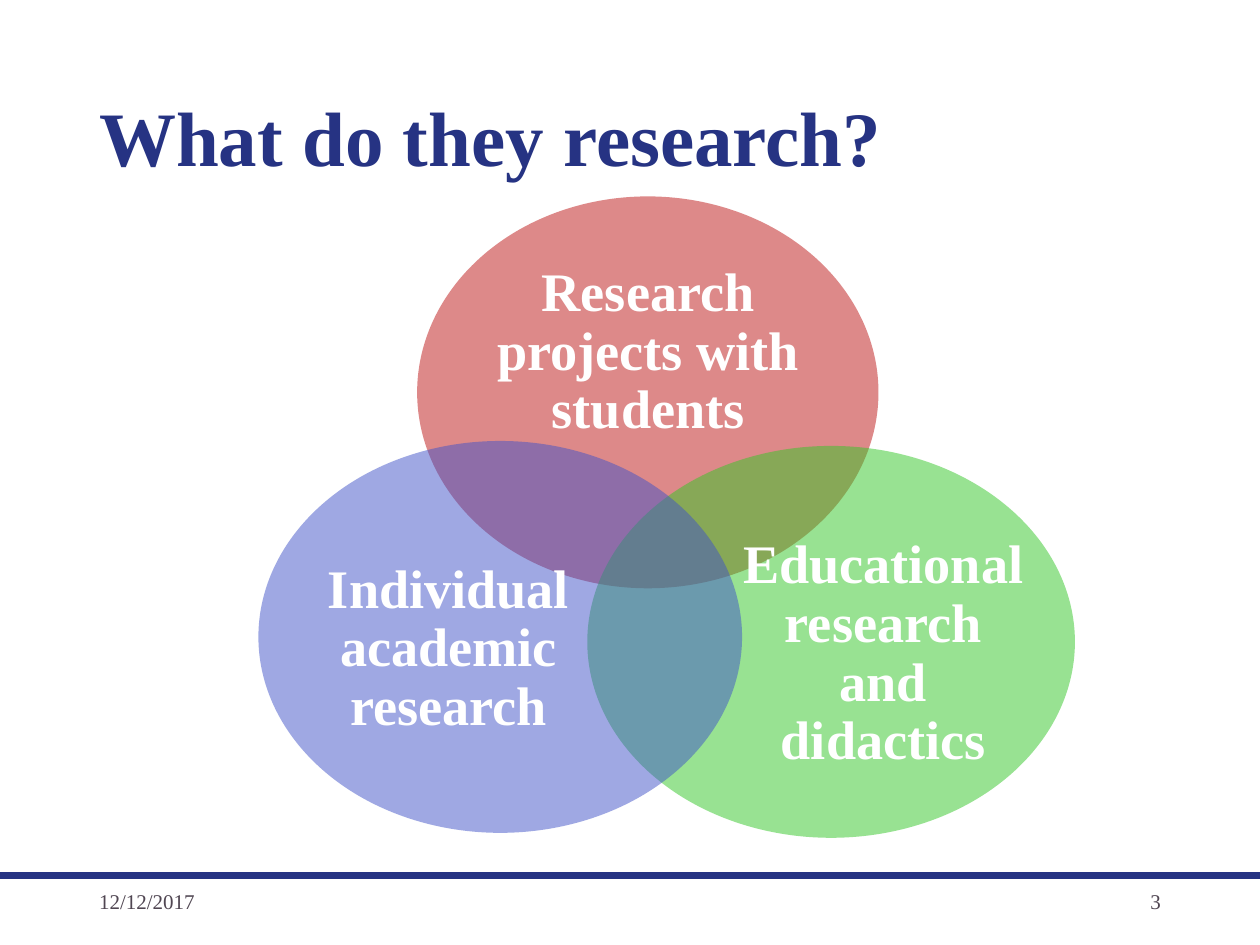
import pptx
import pptx.util
import pptx.dml.color
import pptx.enum.shapes
import pptx.enum.text
import pptx.oxml
import pptx.oxml.ns

Cm = pptx.util.Cm
Pt = pptx.util.Pt
Align = pptx.enum.text.PP_ALIGN

HUES = {
    "navy": "263383",
    "red": "BD1515",
    "green": "32C726",
    "blue": "4053C8",
    "white": "FFFFFF",
    "gray": "504652",
}


def tint(name):
    return pptx.dml.color.RGBColor.from_string(HUES[name])


def add_node(parent, tag, **attrs):
    node = pptx.oxml.parse_xml(f"<{tag} {pptx.oxml.ns.nsdecls('a')}/>")
    for key, val in attrs.items():
        node.set(key, val)
    parent.append(node)


class Page:
    font = "Times New Roman"

    def __init__(self, slide):
        self.shapes = slide.shapes

    def text(self, words, area, size, hue, align=Align.LEFT, bold=False, lead=None, inset=None):
        box = self.shapes.add_textbox(*map(Cm, area))
        frame = box.text_frame
        frame.word_wrap = True
        frame.vertical_anchor = pptx.enum.text.MSO_ANCHOR.MIDDLE
        if inset is not None:
            frame.margin_left = frame.margin_right = Cm(inset)
            frame.margin_top = frame.margin_bottom = Cm(inset)
        para = frame.paragraphs[0]
        para.text = words
        para.alignment = align
        para.line_spacing = lead
        para.font.name = self.font
        para.font.size = Pt(size)
        para.font.bold = bold
        para.font.color.rgb = tint(hue)

    def disc(self, area, hue):
        """Draw a half-transparent ellipse without an outline."""
        oval = self.shapes.add_shape(pptx.enum.shapes.MSO_SHAPE.OVAL, *map(Cm, area))
        oval.shadow.inherit = False
        oval.line.fill.background()
        oval.fill.solid()
        oval.fill.fore_color.rgb = tint(hue)
        color = oval.element.spPr.find(".//" + pptx.oxml.ns.qn("a:srgbClr"))
        add_node(color, "a:alpha", val="50000")

    def rule(self, top, width, weight, hue):
        line = self.shapes.add_connector(
            pptx.enum.shapes.MSO_CONNECTOR.STRAIGHT, 0, Cm(top), Cm(width), Cm(top))
        line.line.width = Pt(weight)
        line.line.color.rgb = tint(hue)
        add_node(line.element.spPr, "a:effectLst")


def main():
    deck = pptx.Presentation()
    deck.slide_width, deck.slide_height = Cm(25.4), Cm(19.05)
    page = Page(deck.slides.add_slide(deck.slide_layouts[6]))

    page.rule(17.65, 25.4, 4.5, "navy")
    page.text("What do they research?", (1.75, 1.02, 21.9, 3.68), 44, "navy",
              bold=True, lead=0.9)

    themes = [
        ("Research projects with students", "red",
         (8.41, 3.96, 9.3, 7.9), (9.65, 5.33, 6.83, 3.56)),
        ("Educational research and didactics", "green",
         (11.84, 8.99, 9.83, 7.9), (14.86, 11.02, 5.89, 4.34)),
        ("Individual academic research", "blue",
         (5.21, 8.89, 9.75, 7.9), (6.12, 10.92, 5.84, 4.34)),
    ]
    for words, hue, disc, label in themes:
        page.disc(disc, hue)
        page.text(words, label, 31, "white", Align.CENTER, bold=True, lead=0.9, inset=0)

    page.text("12/12/2017", (1.75, 17.65, 5.72, 1.02), 12, "gray")
    page.text("3", (17.93, 17.65, 5.72, 1.02), 12, "gray", Align.RIGHT)
    deck.save("out.pptx")


if __name__ == "__main__":
    main()
